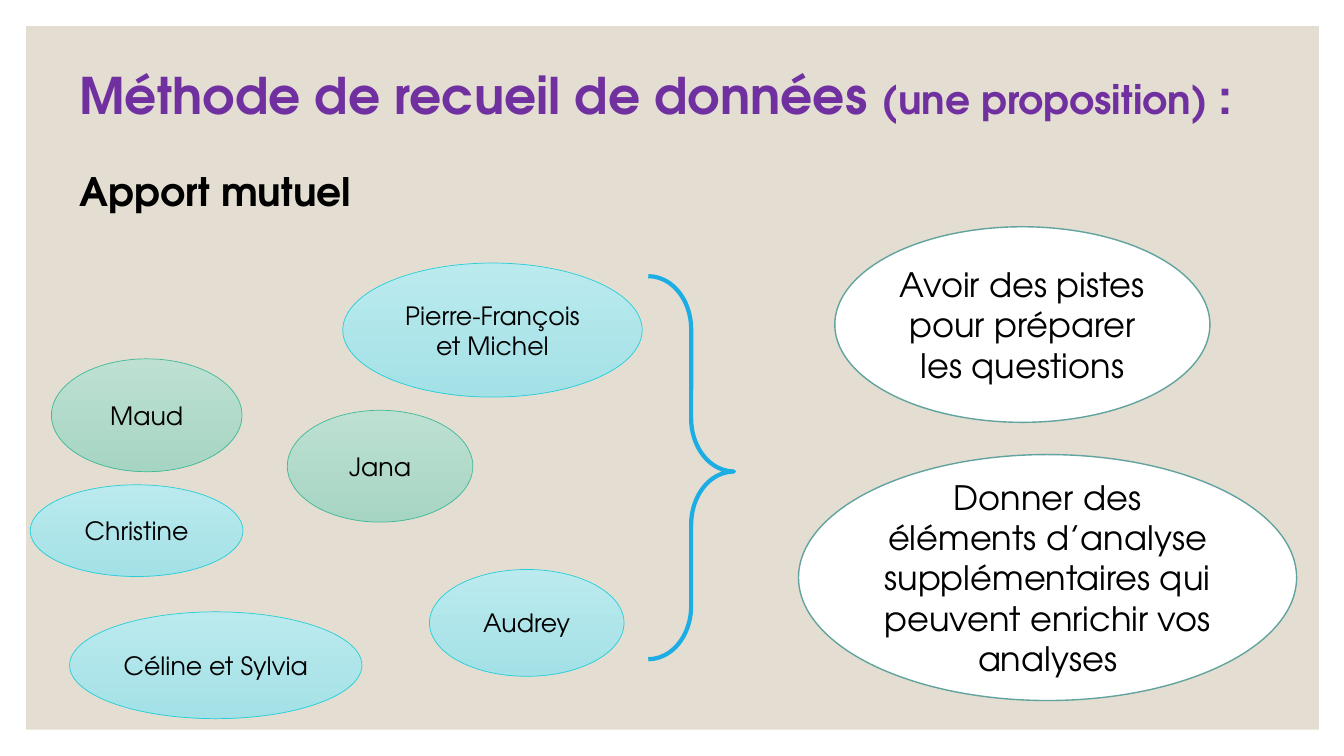
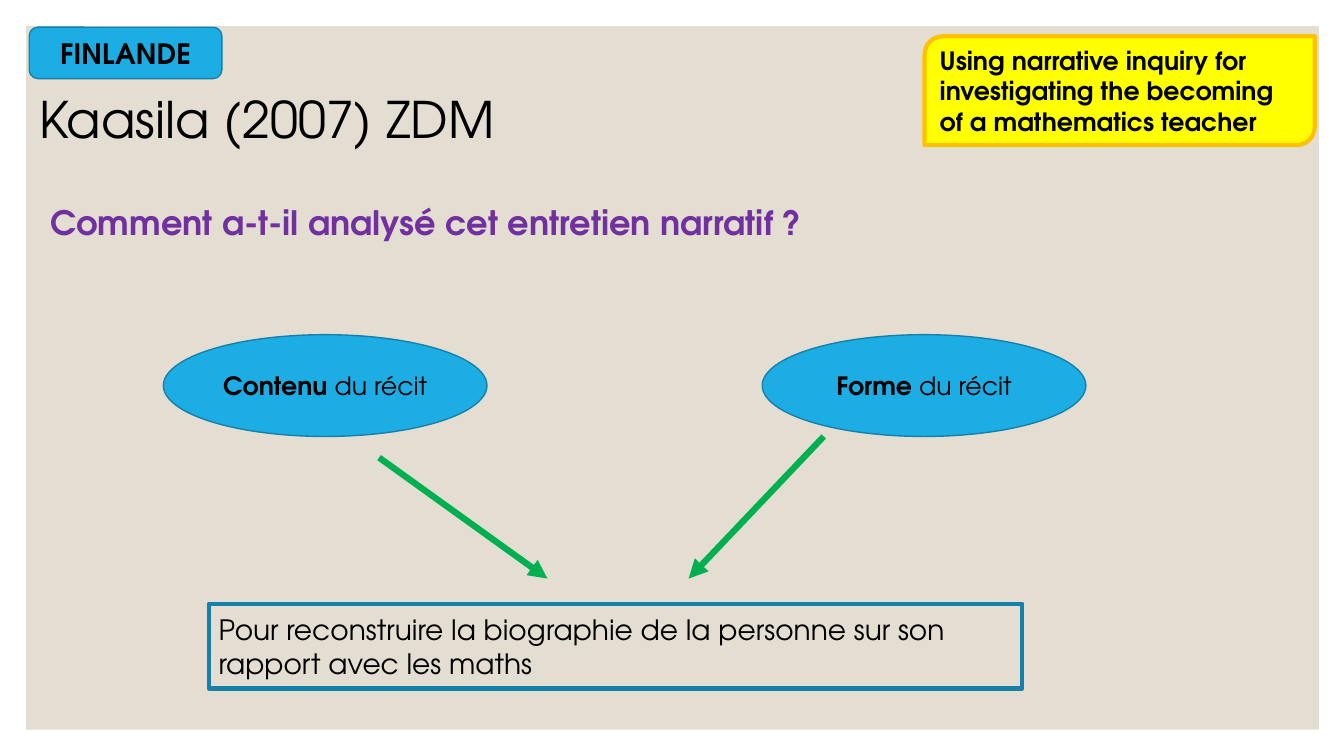
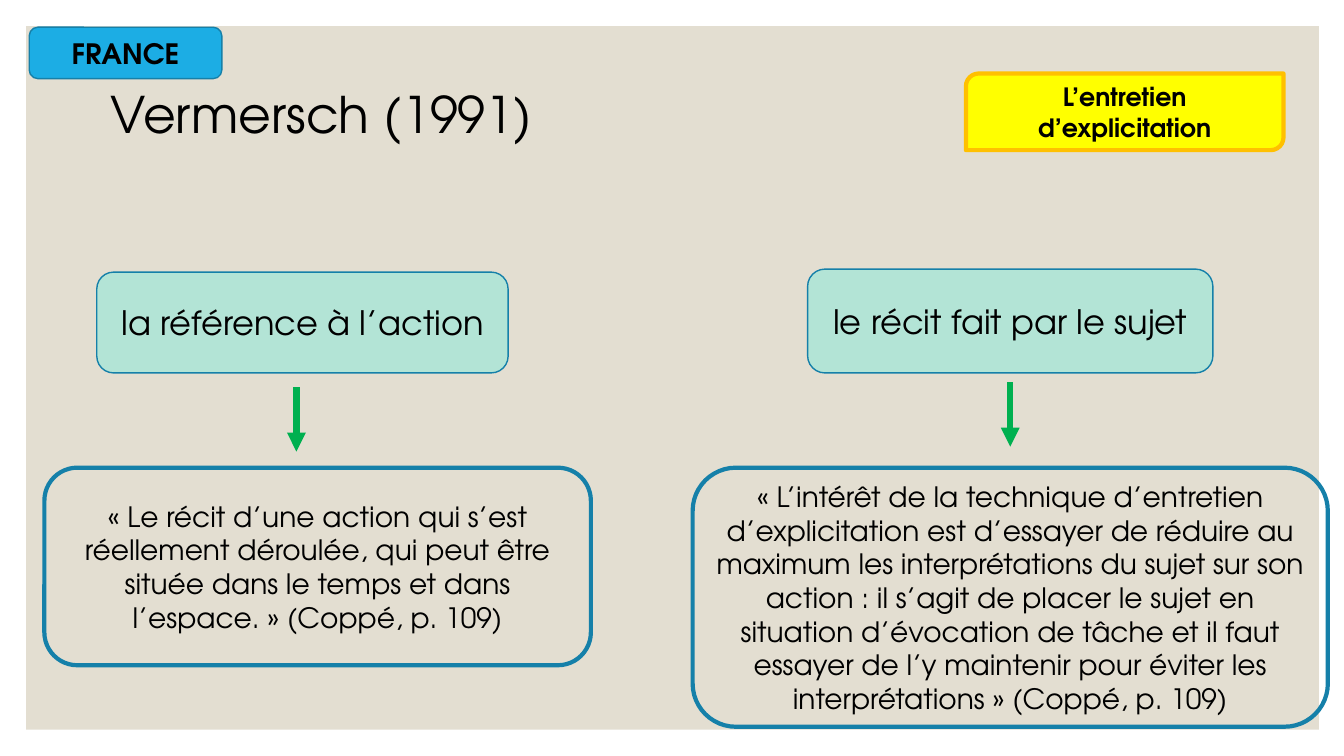
from pptx import Presentation
from pptx.dml.color import RGBColor
from pptx.enum.shapes import MSO_CONNECTOR, MSO_SHAPE
from pptx.enum.text import MSO_ANCHOR, PP_ALIGN
from pptx.oxml.ns import qn
from pptx.util import Inches, Pt
from lxml import etree

RECT = MSO_SHAPE.RECTANGLE
ROUNDED = MSO_SHAPE.ROUNDED_RECTANGLE
DIAGONAL = MSO_SHAPE.ROUND_2_DIAG_RECTANGLE
OVAL = MSO_SHAPE.OVAL
BRACE = MSO_SHAPE.RIGHT_BRACE
STRAIGHT = MSO_CONNECTOR.STRAIGHT
LEFT, CENTER = PP_ALIGN.LEFT, PP_ALIGN.CENTER
MIDDLE = MSO_ANCHOR.MIDDLE

FONT = "TeX Gyre Adventor"
BLACK, WHITE, SAND = "000000", "FFFFFF", "E3DED1"
PURPLE, GREEN, MINT, TEAL = "7030A0", "00B050", "B3E4D6", "62A39F"
BLUE, DARK_BLUE = "1CADE4", "1580A9"
YELLOW, ORANGE = "FFFF00", "FFC000"
# Gradient top, gradient bottom, outline
GREEN_BUBBLE = ("BDE0D2", "A7D5C4", "42BA97")
CYAN_BUBBLE = ("BBEAEE", "A3E1E6", "27CED7")


def rgb(value):
    return RGBColor.from_string(value)


def write_text(frame, text, size=18, color=BLACK, bold=False, align=LEFT):
    """Fill a frame; text is a string or a list of (string, overrides)."""
    frame.word_wrap = True
    para = frame.paragraphs[0]
    para.alignment = align
    spans = [(text, {})] if isinstance(text, str) else text
    for words, changes in spans:
        span = para.add_run()
        span.text = words
        span.font.name = FONT
        span.font.size = Pt(changes.get("size", size))
        span.font.bold = changes.get("bold", bold)
        span.font.color.rgb = rgb(color)


def add_text(page, at, text, **style):
    box = page.shapes.add_textbox(*map(Inches, at))
    write_text(box.text_frame, text, **style)


def add_box(page, kind, at, text=None, fill=None, line=None, width=1, **style):
    """Add a preset shape; fill is a colour, a (top, bottom) pair or None."""
    box = page.shapes.add_shape(kind, *map(Inches, at))
    box.shadow.inherit = False
    if fill is None:
        box.fill.background()
    elif isinstance(fill, str):
        box.fill.solid()
        box.fill.fore_color.rgb = rgb(fill)
    else:
        box.fill.gradient()
        box.fill.gradient_angle = 270
        for stop, color in zip(box.fill.gradient_stops, fill):
            stop.color.rgb = rgb(color)
    if line:
        box.line.color.rgb = rgb(line)
        box.line.width = Pt(width)
    else:
        box.line.fill.background()
    if text:
        box.text_frame.vertical_anchor = MIDDLE
        write_text(box.text_frame, text, **{"align": CENTER, **style})
    return box


def add_bubble(page, at, name, palette):
    top, bottom, line = palette
    add_box(page, OVAL, at, name, fill=(top, bottom), line=line, width=0.5)


def add_arrow(page, start, end):
    arrow = page.shapes.add_connector(STRAIGHT, *map(Inches, start + end))
    arrow.line.color.rgb = rgb(GREEN)
    arrow.line.width = Pt(4.5)
    properties = arrow.line._get_or_add_ln().getparent()
    etree.SubElement(arrow.line._get_or_add_ln(), qn("a:tailEnd"), type="triangle")
    etree.SubElement(properties, qn("a:effectLst"))


def add_page(deck):
    page = deck.slides.add_slide(deck.slide_layouts[6])
    add_box(page, RECT, (0.26, 0.26, 12.82, 6.98), fill=SAND)
    return page


def add_title(page, left, top, text, **style):
    add_text(page, (left, top, 12.51, 0.71), text, **{"size": 36, **style})


def add_country(page, name):
    add_box(page, ROUNDED, (0.29, 0.27, 1.91, 0.51), name, fill=BLUE,
            line=DARK_BLUE, size=20, bold=True)


def add_topic(page, at, text, align):
    add_box(page, DIAGONAL, at, text, fill=YELLOW, line=ORANGE, width=3,
            bold=True, align=align)


def build_method(deck):
    page = add_page(deck)
    add_title(page, 0.69, 0.59, [
        ("Méthode de recueil de données ", {}),
        ("(une proposition) ", {"size": 28}),
        (":", {}),
    ], color=PURPLE, bold=True)
    add_text(page, (0.69, 1.61, 12.51, 0.57), "Apport mutuel", size=28, bold=True)

    for name, at, palette in (
        ("Maud", (0.51, 3.56, 1.89, 1.12), GREEN_BUBBLE),
        ("Jana", (2.85, 4.07, 1.84, 1.11), GREEN_BUBBLE),
        ("Audrey", (4.26, 5.65, 1.93, 1.06), CYAN_BUBBLE),
        ("Pierre-François et Michel", (3.4, 2.61, 2.97, 1.33), CYAN_BUBBLE),
        ("Céline et Sylvia", (0.69, 6.07, 2.9, 1.06), CYAN_BUBBLE),
        ("Christine", (0.3, 4.81, 2.11, 0.91), CYAN_BUBBLE),
    ):
        add_bubble(page, at, name, palette)

    brace = add_box(page, BRACE, (6.43, 2.74, 0.85, 3.8), line=BLUE, width=3)
    brace.adjustments[0] = 0.62
    brace.adjustments[1] = 0.51

    for goal, at in (
        ("Avoir des pistes pour préparer les questions", (8.28, 2.25, 3.72, 1.94)),
        ("Donner des éléments d’analyse supplémentaires qui peuvent enrichir "
         "vos analyses", (7.92, 4.51, 4.94, 2.44)),
    ):
        add_box(page, OVAL, at, goal, fill=WHITE, line=TEAL, size=24)


def build_finland(deck):
    page = add_page(deck)
    add_title(page, 0.29, 0.82, "Kaasila (2007) ZDM")
    add_country(page, "FINLANDE")
    add_topic(page, (9.17, 0.36, 3.87, 1.08),
              "Using narrative inquiry for investigating the becoming "
              "of a mathematics teacher", LEFT)
    add_text(page, (0.4, 1.95, 9.74, 0.5),
             "Comment a-t-il analysé cet entretien narratif ?",
             size=24, color=PURPLE, bold=True)
    for aspect, left in (("Contenu", 1.62), ("Forme", 7.56)):
        add_box(page, OVAL, (left, 3.32, 3.21, 1.01),
                [(aspect, {"bold": True}), (" du récit", {})],
                fill=BLUE, line=DARK_BLUE)
    add_arrow(page, (3.76, 4.54), (5.43, 5.74))
    add_arrow(page, (8.17, 4.33), (6.83, 5.74))
    add_box(page, RECT, (2.07, 5.99, 8.07, 0.84),
            "Pour reconstruire la biographie de la personne sur son rapport "
            "avec les maths", line=DARK_BLUE, width=3, size=20, align=LEFT)


def build_france(deck):
    page = add_page(deck)
    add_title(page, 1, 0.78, "Vermersch (1991)")
    add_country(page, "FRANCE")
    add_topic(page, (9.58, 0.73, 3.15, 0.76), "L’entretien d’explicitation", CENTER)
    for idea, idea_at, arrow_x, arrow_y, quote, quote_at in (
        ("la référence à l’action", (0.96, 2.7, 4.08, 1), 2.94, 3.84,
         "« Le récit d’une action qui s’est réellement déroulée, qui peut être "
         "située dans le temps et dans l’espace. » (Coppé, p. 109)",
         (0.44, 4.64, 5.42, 1.96)),
        ("le récit fait par le sujet", (8.01, 2.67, 4.02, 1.03), 10.02, 3.79,
         "« L’intérêt de la technique d’entretien d’explicitation est d’essayer "
         "de réduire au maximum les interprétations du sujet sur son action : "
         "il s’agit de placer le sujet en situation d’évocation de tâche et il "
         "faut essayer de l’y maintenir pour éviter les interprétations » "
         "(Coppé, p. 109)", (6.87, 4.64, 6.3, 2.57)),
    ):
        add_box(page, ROUNDED, idea_at, idea, fill=MINT, line=DARK_BLUE, size=24)
        add_arrow(page, (arrow_x, arrow_y), (arrow_x, arrow_y + 0.64))
        add_box(page, ROUNDED, quote_at, quote, line=DARK_BLUE, width=3, size=20)


def main():
    deck = Presentation()
    deck.slide_width = Inches(13.33)
    deck.slide_height = Inches(7.5)
    build_method(deck)
    build_finland(deck)
    build_france(deck)
    deck.save("out.pptx")


if __name__ == "__main__":
    main()
